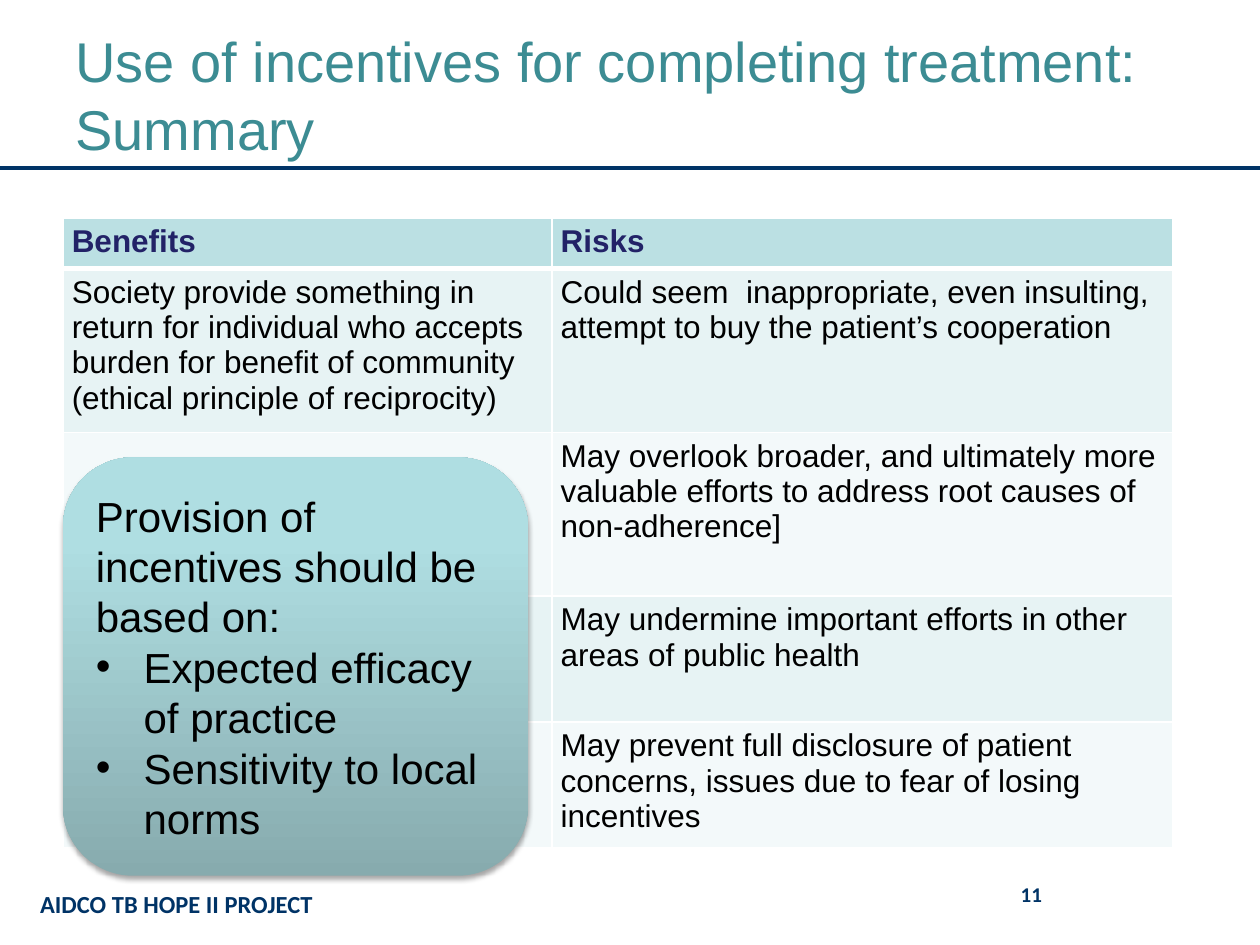
from lxml.etree import SubElement as Sub
from pptx import Presentation
from pptx.dml.color import RGBColor
from pptx.enum.shapes import MSO_CONNECTOR as Link, MSO_SHAPE as Form
from pptx.enum.text import MSO_ANCHOR as Anchor, PP_ALIGN as Align
from pptx.oxml.ns import qn
from pptx.util import Inches, Pt

NAVY = RGBColor(0x00, 0x33, 0x66)
TEAL = RGBColor(0x3C, 0x8C, 0x93)
INK = RGBColor(0x22, 0x22, 0x67)
BLACK = RGBColor(0, 0, 0)
HEAD = RGBColor(0xBB, 0xE0, 0xE3)
BANDS = [RGBColor(0xF3, 0xF9, 0xFA), RGBColor(0xE7, 0xF3, 0xF4)]
DARK = RGBColor(0x87, 0xAB, 0xAE)
LIGHT = RGBColor(0xAF, 0xDE, 0xE2)

deck = Presentation()
deck.slide_width, deck.slide_height = Inches(10), Inches(7.5)
slide = deck.slides.add_slide(deck.slide_layouts[6])
shapes = slide.shapes


def write(para, text, size, color, bold=False, face="Arial"):
    run = para.add_run()
    run.text = text
    run.font.color.rgb = color
    for key, val in {"size": Pt(size), "bold": bold, "name": face}.items():
        setattr(run.font, key, val)


def node(top, tag, **vals):
    return Sub(top, qn(tag), {key: str(val) for key, val in vals.items()})


rule = shapes.add_connector(Link.STRAIGHT, 0, Inches(1.33), deck.slide_width, Inches(1.33))
rule.line.color.rgb = NAVY
rule.line.width = Pt(2.25)
node(rule._element.spPr, "a:effectLst")

labels = [
    ((0.22, 7.01, 3.33, 0.33), "AIDCO TB HOPE II PROJECT", Anchor.TOP, Align.LEFT,
     {"size": 14, "color": NAVY, "bold": True, "face": "Calibri"}),
    ((0.5, 0.25, 9, 1.08), "Use of incentives for completing treatment: Summary", Anchor.BOTTOM, Align.LEFT,
     {"size": 32, "color": TEAL}),
    ((7.06, 6.95, 2.25, 0.4), "11", Anchor.TOP, Align.CENTER,
     {"size": 12, "color": NAVY, "bold": True, "face": "Calibri"}),
]
for spot, text, anchor, align, style in labels:
    frame = shapes.add_textbox(*map(Inches, spot)).text_frame
    frame.word_wrap = True
    frame.vertical_anchor = anchor
    frame.paragraphs[0].alignment = align
    write(frame.paragraphs[0], text, **style)

rows = [
    ("Benefits", "Risks"),
    ("Society provide something in return for individual who accepts burden for benefit of community "
     "(ethical principle of reciprocity)",
     "Could seem  inappropriate, even insulting, attempt to buy the patient’s cooperation"),
    ("", "May overlook broader, and ultimately more valuable efforts to address root causes of non-adherence]"),
    ("", "May undermine important efforts in other areas of public health"),
    ("", "May prevent full disclosure of patient concerns, issues due to fear of losing incentives"),
]
grid = shapes.add_table(len(rows), 2, *map(Inches, (0.5, 1.73, 8.81, 5))).table
for col, wide in zip(grid.columns, (3.88, 4.93)):
    col.width = Inches(wide)
for row, high in zip(grid.rows, (0.4, 1.3, 1.3, 1, 1)):
    row.height = Inches(high)

pads = {"margin_left": 0.07, "margin_right": 0.07, "margin_top": 0.05, "margin_bottom": 0.05}
for r, pair in enumerate(rows):
    for c, text in enumerate(pair):
        cell = grid.cell(r, c)
        for key, val in pads.items():
            setattr(cell, key, Inches(val))
        props = cell._tc.get_or_add_tcPr()
        for side in "LRTB":
            thick = (r, side) in ((0, "B"), (1, "T"))
            edge = node(props, f"a:ln{side}", w=Pt(3 if thick else 1))
            node(node(edge, "a:solidFill"), "a:srgbClr", val="FFFFFF")
        cell.fill.solid()
        cell.fill.fore_color.rgb = BANDS[r % 2] if r else HEAD
        if text:
            write(cell.text_frame.paragraphs[0], text, 18, BLACK if r else INK, r == 0)

card = shapes.add_shape(Form.ROUNDED_RECTANGLE, *map(Inches, (0.5, 3.63, 3.69, 3.32)))
card.line.fill.background()
card.fill.gradient()
card.fill.gradient_angle = 90
for stop, tone, at in zip(card.fill.gradient_stops, (DARK, LIGHT), (0, 0.8)):
    stop.color.rgb = tone
    stop.position = at
glow = node(node(card._element.spPr, "a:effectLst"), "a:outerShdw",
            blurRad=Pt(3.1), dist=Pt(1.8), dir=5400000, rotWithShape=0)
node(node(glow, "a:srgbClr", val="000000"), "a:alpha", val=35000)

frame = card.text_frame
frame.word_wrap = True
frame.vertical_anchor = Anchor.MIDDLE
points = ["Provision of incentives should be based on:", "Expected efficacy of practice",
          "Sensitivity to local norms"]
for i, text in enumerate(points):
    para = frame.add_paragraph() if i else frame.paragraphs[0]
    para.alignment = Align.LEFT
    if i:
        props = para._p.get_or_add_pPr()
        for key, val in {"marL": 0.38, "indent": -0.38}.items():
            props.set(key, str(Inches(val)))
        node(props, "a:buFont", typeface="Arial")
        node(props, "a:buChar", char="•")
    write(para, text, 24, BLACK)

deck.save("out.pptx")
